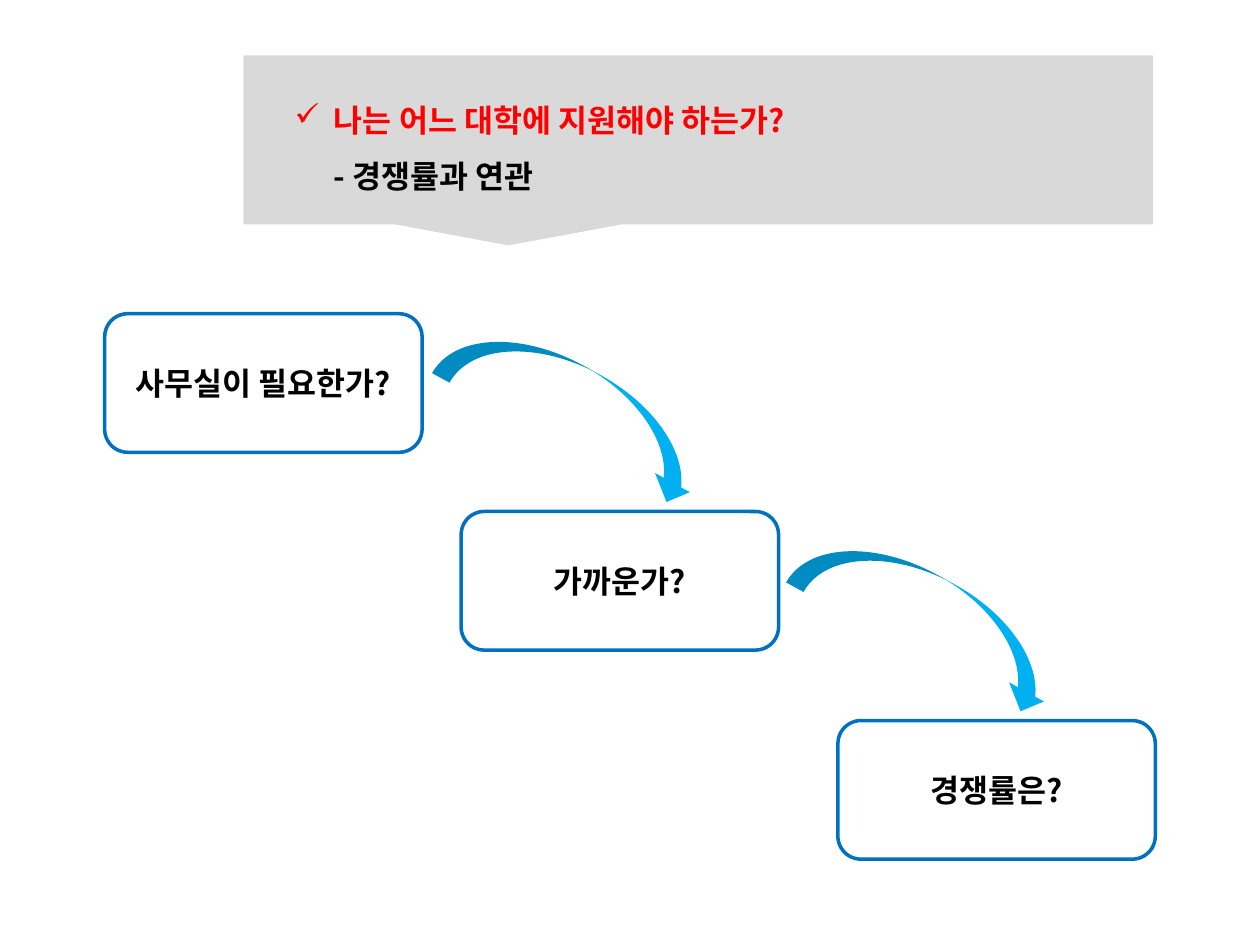
from lxml import etree
from pptx import Presentation
from pptx.dml.color import RGBColor
from pptx.enum.shapes import MSO_SHAPE
from pptx.enum.text import MSO_ANCHOR, MSO_AUTO_SIZE, PP_ALIGN
from pptx.oxml.ns import qn
from pptx.util import Pt

CALLOUT = MSO_SHAPE.RECTANGULAR_CALLOUT
ROUNDED = MSO_SHAPE.ROUNDED_RECTANGLE
CURVED_ARROW = MSO_SHAPE.CURVED_DOWN_ARROW
MIDDLE = MSO_ANCHOR.MIDDLE
GROW = MSO_AUTO_SIZE.SHAPE_TO_FIT_TEXT
CENTER = PP_ALIGN.CENTER

FONT = "Noto Sans CJK KR"
COLORS = {"callout": "D9D9D9", "box": "FFFFFF", "border": "0070C0",
          "arrow": "00B0F0", "question": "FF0000", "text": "000000"}

# Content
QUESTION = "나는 어느 대학에 지원해야 하는가?"
NOTE = "- 경쟁률과 연관"
STEPS = [  # text, left, top
    ("사무실이 필요한가?", 59.8, 179.3),
    ("가까운가?", 263.5, 292.3),
    ("경쟁률은?", 478.8, 411.8),
]
ARROWS = [(247.7, 210.2), (450, 329.8)]  # left, top
BOX_SIZE = (181.4, 79.2)
ARROW_SIZE = (164.2, 45.4)
ARROW_ANGLE = 28.8
INDENT = Pt(22.5)


def color(name):
    return RGBColor.from_string(COLORS[name])


def add_shape(kind, left, top, size, fill, line=None):
    sp = slide.shapes.add_shape(kind, Pt(left), Pt(top), *map(Pt, size))
    sp.shadow.inherit = False
    sp.fill.solid()
    sp.fill.fore_color.rgb = color(fill)
    if line:
        sp.line.color.rgb = color(line)
        sp.line.width = Pt(2)
    else:
        sp.line.fill.background()
    return sp


def add_run(p, text, name):
    r = p.add_run()
    r.text = text
    r.font.size = Pt(18)
    r.font.bold = True
    r.font.name = FONT
    r.font.color.rgb = color(name)
    # Korean text takes the East Asian font
    etree.SubElement(r.font._element, qn("a:ea"), typeface=FONT)


prs = Presentation()
prs.slide_width, prs.slide_height = Pt(720), Pt(540)
slide = prs.slides.add_slide(prs.slide_layouts[6])

# Callout with the main question
add_shape(CALLOUT, 139, 31.7, (519.8, 96.5), "callout")
tf = slide.shapes.add_textbox(Pt(161.3), Pt(43.2), Pt(487.4), Pt(72.7)).text_frame
tf.word_wrap = True
tf.auto_size = GROW
p = tf.paragraphs[0]
p.line_spacing = 1.5
pPr = p._p.get_or_add_pPr()
pPr.set("marL", str(INDENT))
pPr.set("indent", str(-INDENT))
etree.SubElement(pPr, qn("a:buChar"), char="✓")
add_run(p, QUESTION, "question")
p.add_line_break()
add_run(p, NOTE, "text")

# Step boxes
for text, left, top in STEPS:
    tf = add_shape(ROUNDED, left, top, BOX_SIZE, "box", "border").text_frame
    tf.word_wrap = True
    tf.vertical_anchor = MIDDLE
    p = tf.paragraphs[0]
    p.alignment = CENTER
    add_run(p, text, "text")

# Arrows between the steps
for left, top in ARROWS:
    add_shape(CURVED_ARROW, left, top, ARROW_SIZE, "arrow").rotation = ARROW_ANGLE

prs.save("out.pptx")
